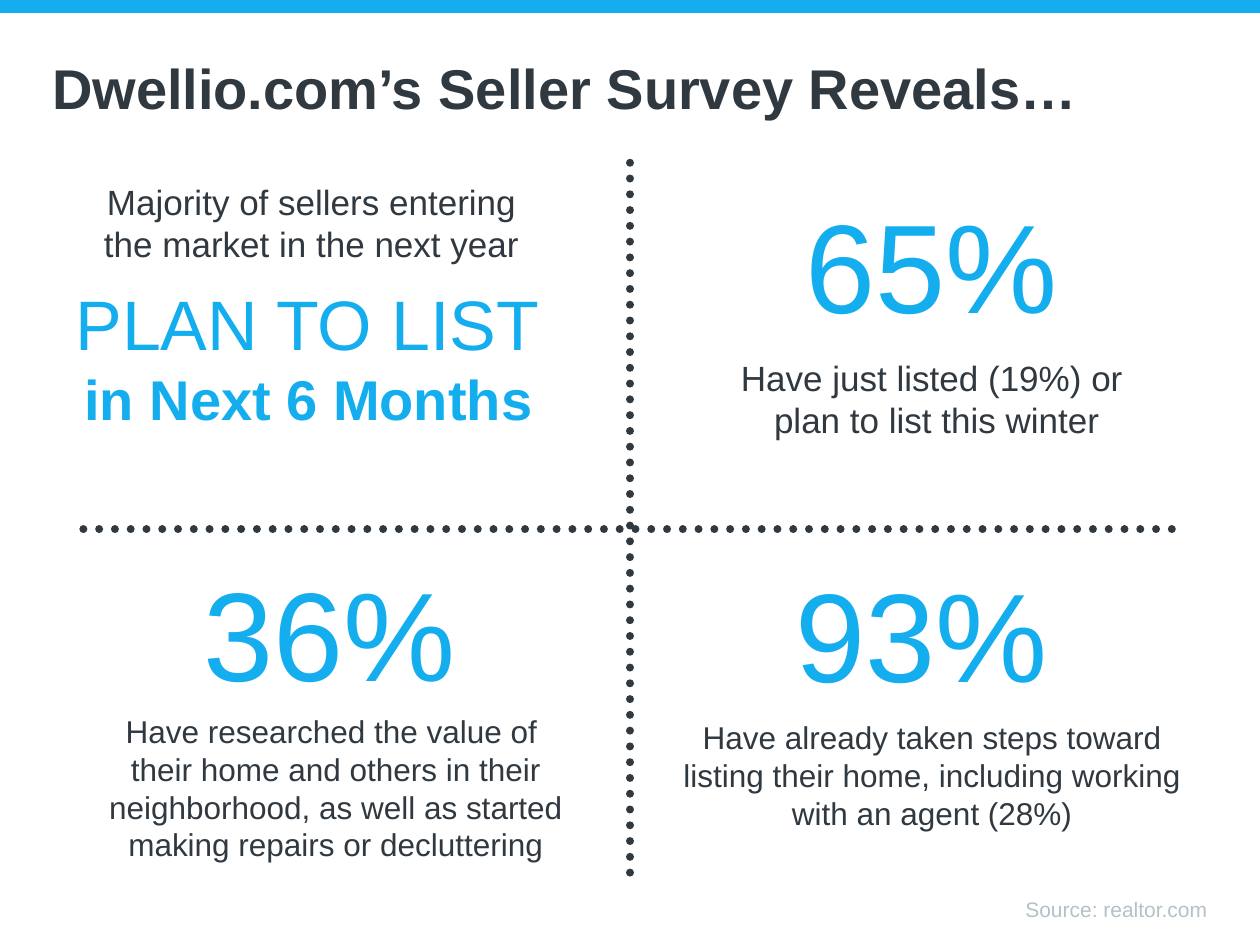
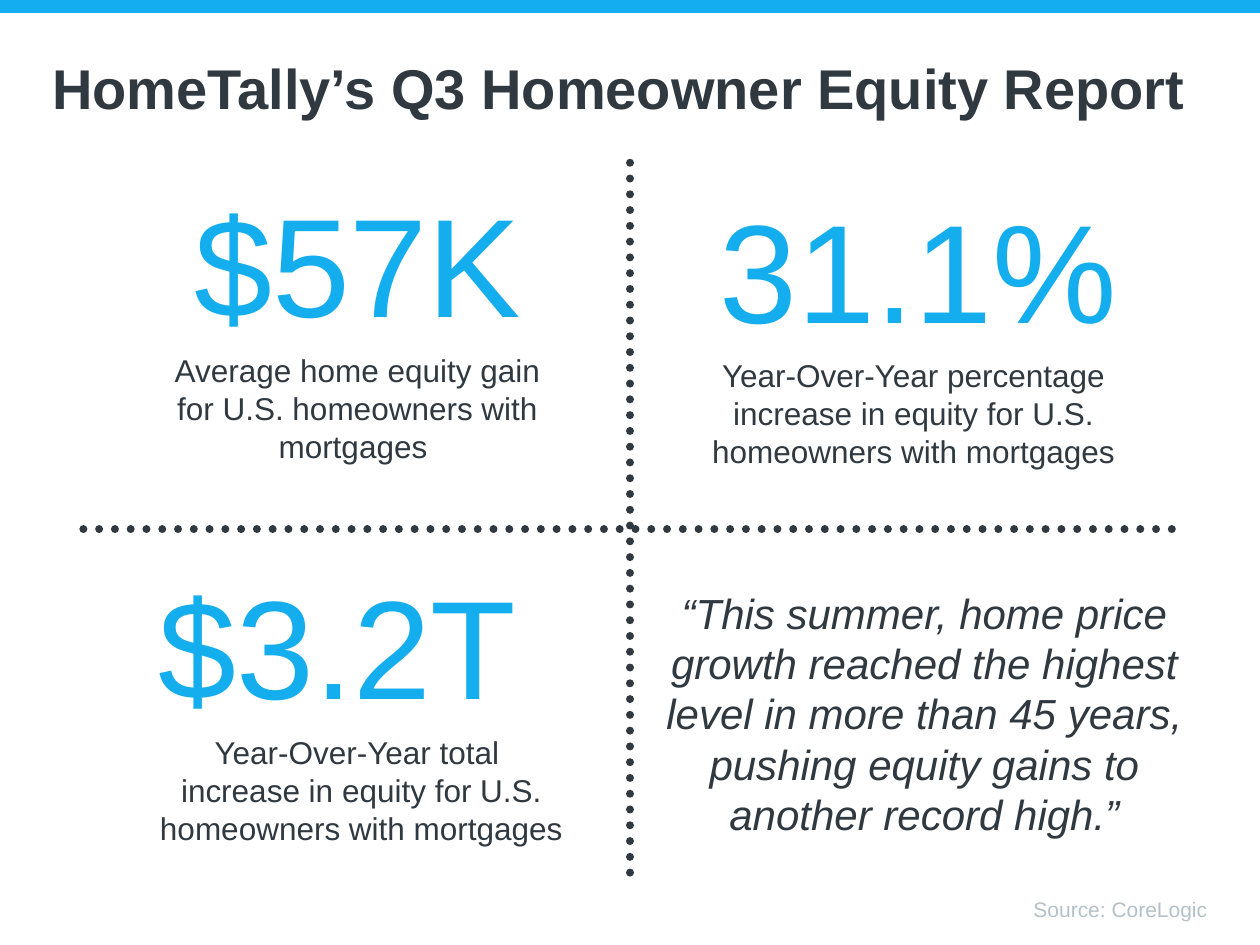
import dataclasses

import lxml.etree
import pptx
import pptx.dml.color
import pptx.enum.dml
import pptx.enum.shapes
import pptx.enum.text
import pptx.oxml.ns
import pptx.util

Cm = pptx.util.Cm
Pt = pptx.util.Pt
Align = pptx.enum.text.PP_ALIGN


@dataclasses.dataclass(frozen=True)
class Theme:
    font: str = "Arial"
    band: str = "14ADF0"
    accent: str = "14AEEF"
    ink: str = "303840"
    muted: str = "B4C1C6"
    title: int = 32
    figure: int = 72
    large_figure: int = 80
    headline: int = 40
    quote: int = 24
    lead: int = 20
    caption: int = 18
    source: int = 12
    divider: float = 4.5


theme = Theme()


def rgb(value):
    return pptx.dml.color.RGBColor.from_string(value)


def add_text(page, place, text, box=None, size=theme.caption, color=theme.ink,
             bold=False, italic=False, align=Align.CENTER, space_before=0,
             line_spacing=None, insets=None):
    """Write one paragraph per line of text, in a new box at place or at the end of box."""
    is_new = box is None
    if is_new:
        box = page.shapes.add_textbox(*map(Cm, place))
        frame = box.text_frame
        frame.word_wrap = True
        if insets:
            (frame.margin_left, frame.margin_top,
             frame.margin_right, frame.margin_bottom) = map(Cm, insets)
    frame = box.text_frame
    for index, line in enumerate(text.split("\n")):
        para = frame.paragraphs[0] if is_new and index == 0 else frame.add_paragraph()
        para.alignment = align
        if space_before:
            para.space_before = Pt(space_before)
        if line_spacing:
            para.line_spacing = line_spacing
        span = para.add_run()
        span.text = line
        span.font.name = theme.font
        span.font.size = Pt(size)
        span.font.bold = bold
        span.font.italic = italic
        span.font.color.rgb = rgb(color)
    return box


figure = {"size": theme.figure, "color": theme.accent}
large_figure = {"size": theme.large_figure, "color": theme.accent}
lead = {"size": theme.lead}
caption = {"size": theme.caption}
quote = {"size": theme.quote, "italic": True}

# Each text block: (left, top, width, height) in cm, wording, format
survey_blocks = [
    ((12.42, 3.66, 12.73, 3.33), "65%", figure),
    ((12.52, 7.07, 12.73, 1.96),
     "Have just listed (19%) or \nplan to list this winter", lead),
    ((12.22, 11.1, 12.73, 3.33), "93%", figure),
    ((13.34, 14.35, 10.9, 2.57),
     "Have already taken steps toward listing their home, "
     "including working with an agent (28%)", caption),
    ((0.28, 11.07, 12.73, 3.33), "36%", figure),
    ((1.32, 14.23, 10.9, 3.33),
     "Have researched the value of \ntheir home and others in their neighborhood, "
     "as well as started making repairs or decluttering", caption),
]
equity_blocks = [
    ((13.97, 7.06, 8.89, 2.57),
     "Year-Over-Year percentage increase in equity for U.S. "
     "homeowners with mortgages", caption),
    ((14.07, 3.58, 8.89, 3.68), "31.1%", large_figure),
    ((2.74, 14.66, 9.09, 2.57),
     "Year-Over-Year total \nincrease in equity for U.S. homeowners with mortgages",
     caption),
    ((2.95, 11.15, 8.89, 3.68), "$3.2T", {**large_figure, "align": Align.LEFT}),
    ((2.76, 6.96, 8.89, 2.57),
     "Average home equity gain\nfor U.S. homeowners with mortgages ", caption),
    ((2.77, 3.45, 8.89, 3.68), "$57K", large_figure),
    ((13.15, 11.71, 10.97, 5.38),
     "“This summer, home price growth reached the highest level in more than "
     "45 years, pushing equity gains to another record high.”", quote),
]
slides = [
    ("Dwellio.com’s Seller Survey Reveals…", "Source: realtor.com", survey_blocks),
    ("HomeTally’s Q3 Homeowner Equity Report", "Source: CoreLogic", equity_blocks),
]
dividers = [(1.68, 10.67, 23.77, 10.67), (12.7, 3.28, 12.7, 17.7)]

deck = pptx.Presentation()
deck.slide_width = Cm(25.4)
deck.slide_height = Cm(19.05)

for title, source, blocks in slides:
    page = deck.slides.add_slide(deck.slide_layouts[6])

    band = page.shapes.add_shape(pptx.enum.shapes.MSO_SHAPE.RECTANGLE,
                                 0, 0, deck.slide_width, Cm(0.26))
    band.shadow.inherit = False
    band.fill.solid()
    band.fill.fore_color.rgb = rgb(theme.band)
    band.line.fill.background()

    add_text(page, (1.07, 18.01, 23.27, 0.61), source, size=theme.source,
             color=theme.muted, align=Align.RIGHT, line_spacing=0.9,
             insets=(0, 0.13, 0, 0.13))
    add_text(page, (1.05, 1.07, 23.29, 0.99), title, size=theme.title, bold=True,
             align=Align.LEFT, insets=(0, 0, 0, 0))

    for ends in dividers:
        divider = page.shapes.add_connector(
            pptx.enum.shapes.MSO_CONNECTOR.STRAIGHT, *map(Cm, ends))
        divider.line.color.rgb = rgb(theme.ink)
        divider.line.width = Pt(theme.divider)
        divider.line.dash_style = pptx.enum.dml.MSO_LINE.ROUND_DOT
        divider.line._get_or_add_ln().set("cap", "rnd")
        lxml.etree.SubElement(divider._element.spPr, pptx.oxml.ns.qn("a:effectLst"))

    for place, text, style in blocks:
        add_text(page, place, text, **style)

survey = deck.slides[0]
plan_box = add_text(survey, (0.03, 3.51, 12.7, 5.82),
                    "Majority of sellers entering \nthe market in the next year ", **lead)
add_text(survey, None, "PLAN TO LIST ", box=plan_box, size=theme.headline,
         color=theme.accent, space_before=9.5)
add_text(survey, None, "in Next 6 Months ", box=plan_box, size=theme.title,
         color=theme.accent, bold=True)

deck.save("out.pptx")
